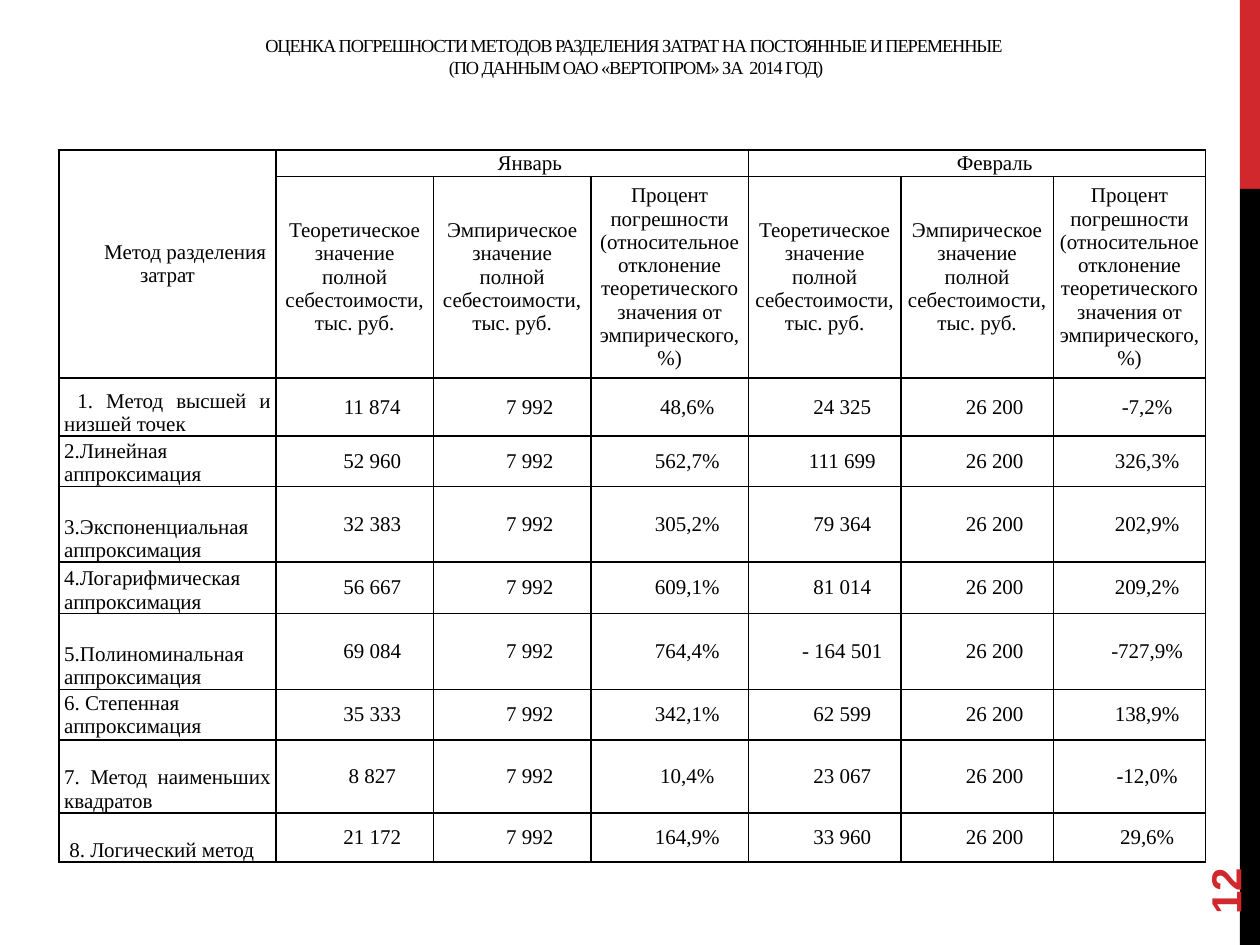
from copy import deepcopy

from lxml.etree import SubElement
from pptx import Presentation
from pptx.dml.color import RGBColor
from pptx.enum.shapes import MSO_SHAPE
from pptx.enum.text import MSO_ANCHOR, MSO_AUTO_SIZE, PP_ALIGN
from pptx.oxml.ns import qn
from pptx.util import Inches, Pt

THEME = {
    "black": RGBColor(0, 0, 0),
    "red": RGBColor(0xD1, 0x28, 0x2E),
    "serif": "Times New Roman",
    "sans": "Arial",
    "title_size": Pt(10.5),
    "table_size": Pt(12),
    "number_size": Pt(24),
    "border": Pt(1),
}

TITLE = ("ОЦЕНКА ПОГРЕШНОСТИ МЕТОДОВ РАЗДЕЛЕНИЯ ЗАТРАТ НА ПОСТОЯННЫЕ И ПЕРЕМЕННЫЕ\v"
         " (ПО ДАННЫМ ОАО «ВЕРТОПРОМ» ЗА  2014 ГОД)")
SLIDE_NUMBER = "12"
METHOD_HEADING = "Метод разделения затрат"
MONTHS = ["Январь", "Февраль"]
MEASURES = [
    "Теоретическое значение полной себестоимости, тыс. руб.",
    "Эмпирическое значение полной себестоимости, тыс. руб.",
    "Процент погрешности (относительное отклонение теоретического значения от эмпирического, %)",
]
EMPIRICAL = ["7 992", "26 200"]
# Method, then (theoretical value, error) for each month
METHODS = [
    (" 1. Метод высшей и низшей точек", ("11 874", "48,6%"), ("24 325", "-7,2%")),
    ("2.Линейная аппроксимация", ("52 960", "562,7%"), ("111 699", "326,3%")),
    (" 3.Экспоненциальная аппроксимация", ("32 383", "305,2%"), ("79 364", "202,9%")),
    ("4.Логарифмическая аппроксимация", ("56 667", "609,1%"), ("81 014", "209,2%")),
    (" 5.Полиноминальная аппроксимация", ("69 084", "764,4%"), ("- 164 501", "-727,9%")),
    ("6. Степенная\nаппроксимация", ("35 333", "342,1%"), ("62 599", "138,9%")),
    ("7. Метод наименьших квадратов", ("8 827", "10,4%"), ("23 067", "-12,0%")),
    (" 8. Логический метод", ("21 172", "164,9%"), ("33 960", "29,6%")),
]
INDENTED_METHODS = {2, 4}
COLUMN_WIDTHS = [1.72] + [1.25] * 3 + [1.21] * 3
ROW_HEIGHTS = [0.21, 1.55, 0.46, 0.34, 0.49, 0.41, 0.31, 0.39, 0.58, 0.39]
FIRST_LINE = 0.28


def apply_format(target, **values):
    for name, value in values.items():
        setattr(target, name, value)


def format_font(font, face, size, color, bold=False):
    apply_format(font, name=face, size=size, bold=bold)
    font.color.rgb = color


def add_bar(slide, top, height, color):
    bar = slide.shapes.add_shape(MSO_SHAPE.RECTANGLE, Inches(9.84), Inches(top),
                                 Inches(0.16), Inches(height))
    bar.shadow.inherit = False
    bar.fill.solid()
    bar.fill.fore_color.rgb = color
    bar.line.fill.background()


def add_title(slide):
    title = slide.shapes.title
    apply_format(title, left=Inches(0.5), top=Inches(0.17),
                 width=Inches(9.07), height=Inches(0.67))
    frame = title.text_frame
    frame.text = TITLE
    apply_format(frame, word_wrap=True, auto_size=MSO_AUTO_SIZE.NONE,
                 vertical_anchor=MSO_ANCHOR.BOTTOM, margin_bottom=Inches(0.22))
    paragraph = frame.paragraphs[0]
    apply_format(paragraph, alignment=PP_ALIGN.CENTER, line_spacing=1.0)
    for run in paragraph.runs:
        format_font(run.font, THEME["serif"], THEME["title_size"], THEME["black"])
        run._r.get_or_add_rPr().set("spc", "-60")
    # The line break needs the size of the text around it
    line_break = paragraph._p.find(qn("a:br"))
    line_break.insert(0, deepcopy(paragraph.runs[0]._r.rPr))


def add_slide_number(slide):
    box = slide.shapes.add_textbox(Inches(9), Inches(6.44), Inches(1.44), Inches(0.4))
    box.rotation = 270
    frame = box.text_frame
    frame.text = SLIDE_NUMBER
    apply_format(frame, word_wrap=True, vertical_anchor=MSO_ANCHOR.MIDDLE)
    format_font(frame.paragraphs[0].runs[0].font, THEME["sans"],
                THEME["number_size"], THEME["red"], bold=True)


def add_borders(cell):
    properties = cell._tc.get_or_add_tcPr()
    for position, side in enumerate(("a:lnL", "a:lnR", "a:lnT", "a:lnB")):
        line = SubElement(properties, qn(side), w=str(THEME["border"]))
        fill = SubElement(line, qn("a:solidFill"))
        SubElement(fill, qn("a:srgbClr"), val=str(THEME["black"]))
        properties.insert(position, line)


def write_cell(cell, text, alignment=PP_ALIGN.CENTER, anchor=MSO_ANCHOR.MIDDLE,
               margin=0, indent=0):
    cell.text = text
    cell.vertical_anchor = anchor
    for paragraph in cell.text_frame.paragraphs:
        paragraph.alignment = alignment
        properties = paragraph._p.get_or_add_pPr()
        properties.set("marL", str(Inches(margin)))
        properties.set("indent", str(Inches(indent)))
        for run in paragraph.runs:
            format_font(run.font, THEME["serif"], THEME["table_size"], THEME["black"])


def write_method(cell, index, name):
    if "\n" in name:
        write_cell(cell, name, PP_ALIGN.LEFT, margin=0.25, indent=-0.25)
    else:
        indent = FIRST_LINE if index in INDENTED_METHODS else 0
        write_cell(cell, name, PP_ALIGN.JUSTIFY, MSO_ANCHOR.BOTTOM, indent=indent)


def add_method_table(slide):
    table = slide.shapes.add_table(
        len(ROW_HEIGHTS), len(COLUMN_WIDTHS), Inches(0.47), Inches(1.19),
        Inches(sum(COLUMN_WIDTHS)), Inches(sum(ROW_HEIGHTS))).table
    apply_format(table, first_row=False, horz_banding=False)
    for column, width in zip(table.columns, COLUMN_WIDTHS):
        column.width = Inches(width)
    for row, height in zip(table.rows, ROW_HEIGHTS):
        row.height = Inches(height)
    for cell in table.iter_cells():
        apply_format(cell, margin_left=Inches(0.04), margin_right=Inches(0.04),
                     margin_top=0, margin_bottom=0)
        cell.fill.background()
        add_borders(cell)

    # Headings
    table.cell(0, 0).merge(table.cell(1, 0))
    write_cell(table.cell(0, 0), METHOD_HEADING, indent=FIRST_LINE)
    for month_index, month in enumerate(MONTHS):
        first = 1 + month_index * len(MEASURES)
        table.cell(0, first).merge(table.cell(0, first + len(MEASURES) - 1))
        write_cell(table.cell(0, first), month, indent=FIRST_LINE)
        for offset, measure in enumerate(MEASURES):
            write_cell(table.cell(1, first + offset), measure)

    # Methods and their values
    for index, (name, *months) in enumerate(METHODS):
        row = index + 2
        write_method(table.cell(row, 0), index, name)
        values = [value for (theory, error), actual in zip(months, EMPIRICAL)
                  for value in (theory, actual, error)]
        for column, value in enumerate(values, start=1):
            write_cell(table.cell(row, column), value, indent=FIRST_LINE)


def main():
    presentation = Presentation()
    apply_format(presentation, slide_width=Inches(10), slide_height=Inches(7.5))
    slide = presentation.slides.add_slide(presentation.slide_layouts[5])
    add_bar(slide, 0, 1.5, THEME["red"])
    add_bar(slide, 1.5, 6, THEME["black"])
    add_title(slide)
    add_slide_number(slide)
    add_method_table(slide)
    presentation.save("out.pptx")


if __name__ == "__main__":
    main()
